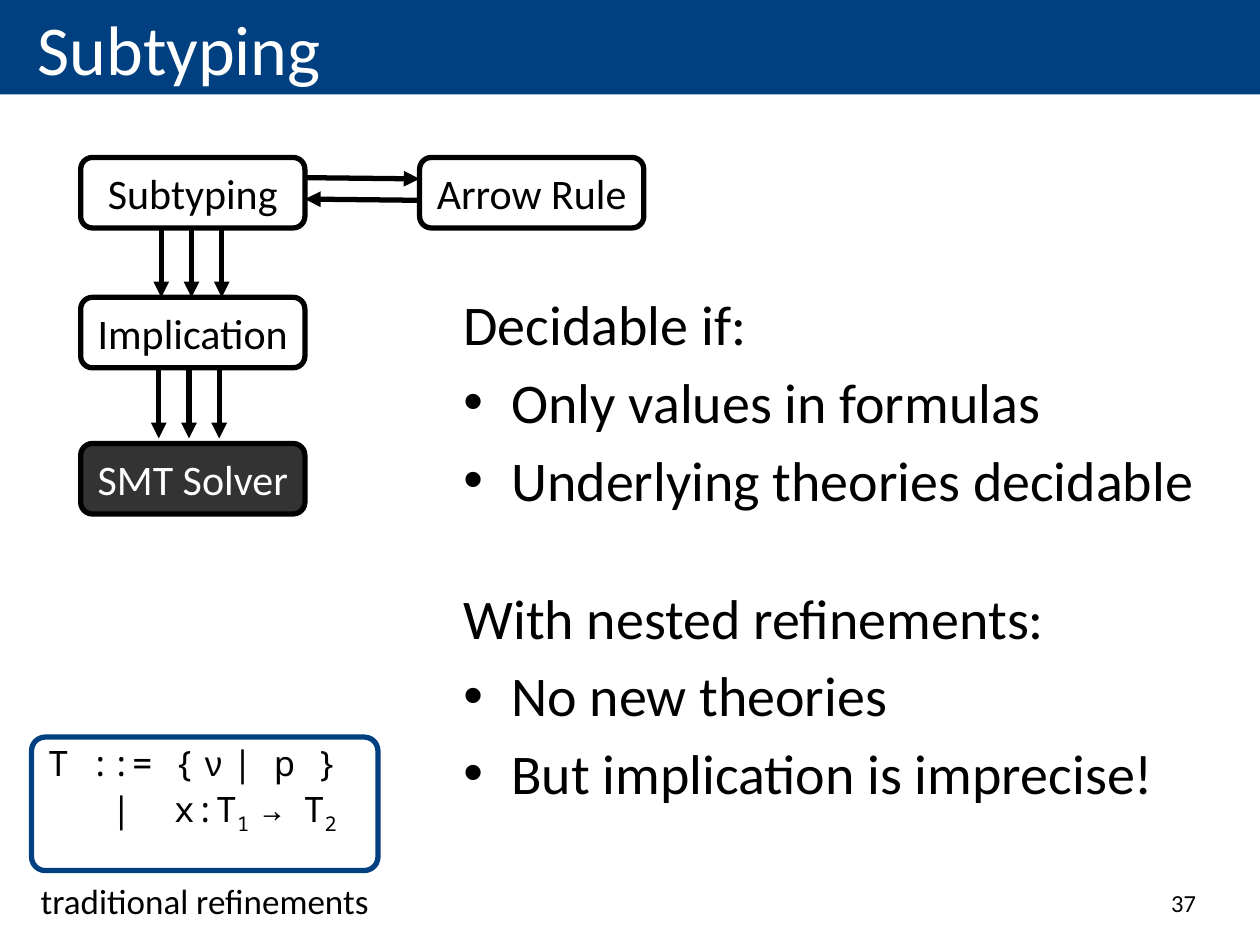
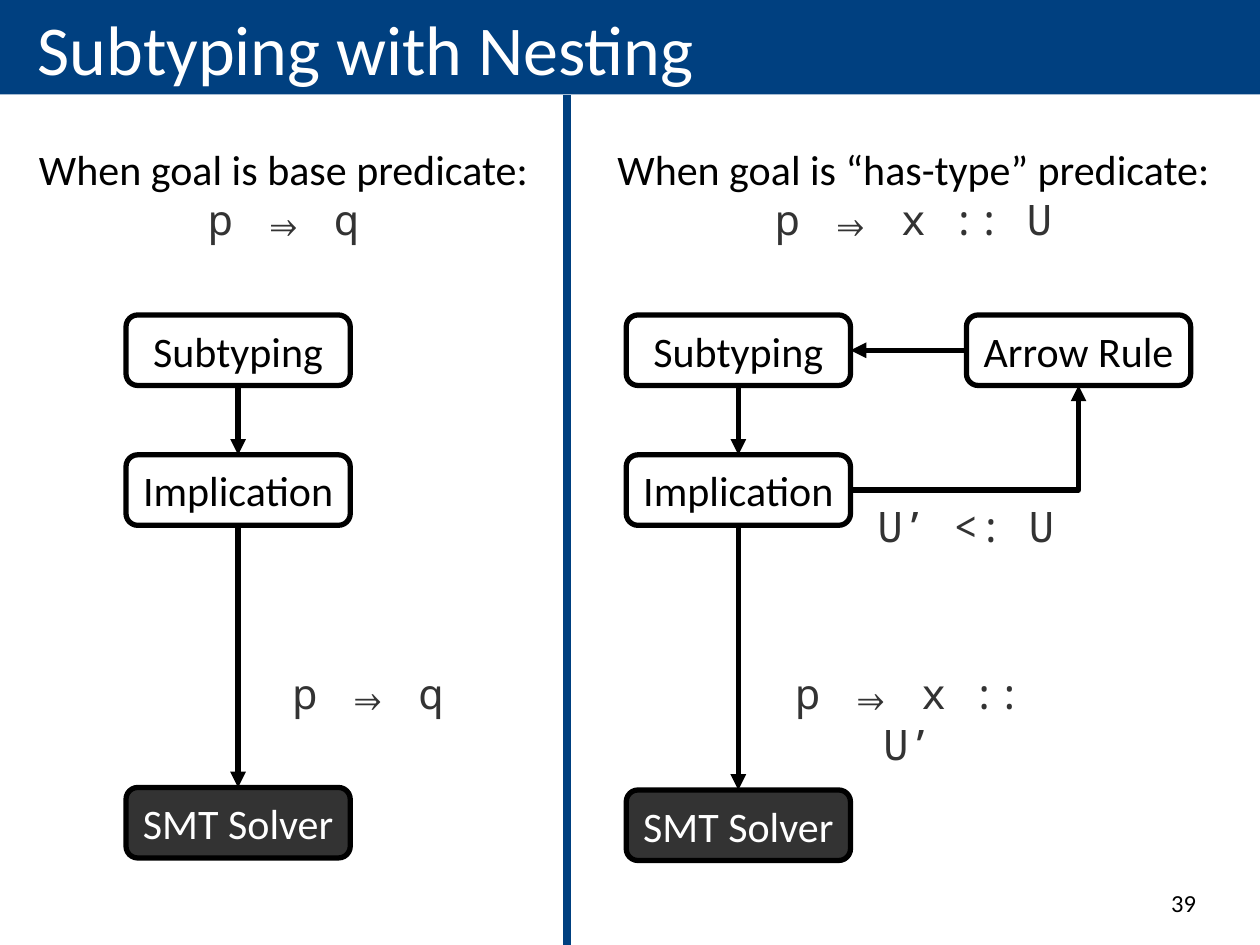
from lxml import etree
from pptx import Presentation
from pptx.dml.color import RGBColor
from pptx.enum import shapes, text
from pptx.oxml import ns
from pptx.util import Inches, Pt

NAVY, BLACK, DARK, WHITE = "004080", "000000", "333333", "FFFFFF"
SANS, MONO = "Calibri", "Noto Sans Mono"
BOX_W, BOX_H = 1.78, 0.56
CENTER, RIGHT = text.PP_ALIGN.CENTER, text.PP_ALIGN.RIGHT
TOP, MIDDLE, BOTTOM = (text.MSO_ANCHOR.TOP, text.MSO_ANCHOR.MIDDLE,
                       text.MSO_ANCHOR.BOTTOM)

SUBTYPING = {
    "title": "Subtyping",
    "number": "37",
    "boxes": [("Subtyping", 0.64, 1.25), ("Arrow Rule", 3.33, 1.25),
              ("Implication", 0.64, 2.36), ("SMT Solver", 0.64, 3.52)],
    "arrows": [((2.42, 1.41), (3.33, 1.42)), ((3.33, 1.59), (2.42, 1.58))],
    "triples": [(1.52, 1.81), (1.5, 2.93)],
    "lists": [
        (2.25, "Decidable if:",
         ["Only values in formulas", "Underlying theories decidable"]),
        (4.58, "With nested refinements:",
         ["No new theories", "But implication is imprecise!"]),
    ],
    "grammar": [
        [("T ::= {", MONO, 0), (" ν ", "Arial", 0), ("| p }", MONO, 0)],
        [("|\tx:T", MONO, 0), ("1 ", MONO, -25000), ("→ T", MONO, 0),
         ("2", MONO, -25000)],
    ],
    "caption": "traditional refinements",
}

NESTING = {
    "title": "Subtyping with Nesting",
    "number": "39",
    "columns": [(1, 6.25), (4.97, 6.27)],
    "goals": [
        (0, 4.5, "When goal is base predicate:", "p ⇒ q"),
        (4.5, 5.5, "When goal is “has-type” predicate:", "p ⇒ x :: U"),
    ],
    "arrow_rule": ("Arrow Rule", 7.67, 2.5),
    "labels": [("p ⇒ q", 1.92, 5.25, 2), ("p ⇒ x :: U’", 5.92, 5.25, 2.58),
               ("U’ <: U", 6.75, 3.92, 1.83)],
}


def color(value):
    return RGBColor.from_string(value)


def place(sp, left, top, width, height):
    sp.left, sp.top = Inches(left), Inches(top)
    sp.width, sp.height = Inches(width), Inches(height)


def add_run(p, words, size, fill=BLACK, font=SANS, baseline=0):
    r = p.add_run()
    r.text = words
    r.font.size, r.font.name = Pt(size), font
    r.font.color.rgb = color(fill)
    if baseline:
        r.font._element.set("baseline", str(baseline))


def indent(p, left, first, bullet=None):
    pPr = p._p.get_or_add_pPr()
    pPr.set("marL", str(Inches(left)))
    pPr.set("indent", str(Inches(first)))
    if bullet:
        etree.SubElement(pPr, ns.qn("a:buFont")).set("typeface", "Arial")
        etree.SubElement(pPr, ns.qn("a:buChar")).set("char", bullet)


def next_paragraph(tf, i):
    return tf.add_paragraph() if i else tf.paragraphs[0]


def add_text(slide, at, lines, size, align=CENTER, anchor=TOP):
    sp = slide.shapes.add_textbox(*map(Inches, at))
    tf = sp.text_frame
    tf.word_wrap, tf.vertical_anchor = True, anchor
    for i, (words, fill, font) in enumerate(lines):
        p = next_paragraph(tf, i)
        p.alignment = align
        add_run(p, words, size, fill, font)
    return tf


def add_rounded(slide, at, line, adjust, fill=None):
    sp = slide.shapes.add_shape(shapes.MSO_SHAPE.ROUNDED_RECTANGLE,
                                *map(Inches, at))
    sp.adjustments[0] = adjust
    sp.shadow.inherit = False
    if fill:
        sp.fill.solid()
        sp.fill.fore_color.rgb = color(fill)
    else:
        sp.fill.background()
    sp.line.color.rgb, sp.line.width = color(line), Pt(3)
    return sp.text_frame


def add_box(slide, label, left, top):
    solver = label == "SMT Solver"
    tf = add_rounded(slide, (left, top, BOX_W, BOX_H), BLACK, 0.167,
                     DARK if solver else None)
    tf.word_wrap, tf.vertical_anchor = False, MIDDLE
    p = tf.paragraphs[0]
    p.alignment = CENTER
    add_run(p, label, 24, WHITE if solver else BLACK)


def add_line(slide, start, end, fill=BLACK, width=3, arrow=True, bent=False):
    kind = shapes.MSO_CONNECTOR.ELBOW if bent else shapes.MSO_CONNECTOR.STRAIGHT
    sp = slide.shapes.add_connector(kind, *map(Inches, start + end))
    sp.line.color.rgb, sp.line.width = color(fill), Pt(width)
    spPr = sp._element.spPr
    if arrow:
        etree.SubElement(spPr.find(ns.qn("a:ln")),
                         ns.qn("a:tailEnd")).set("type", "triangle")
    if bent:
        spPr.find(ns.qn("a:prstGeom")).set("prst", "bentConnector2")
    etree.SubElement(spPr, ns.qn("a:effectLst"))


def add_slide(prs, content):
    slide = prs.slides.add_slide(prs.slide_layouts[5])
    sp = slide.shapes.title
    place(sp, 0, 0, 10, 0.75)
    sp.fill.solid()
    sp.fill.fore_color.rgb = color(NAVY)
    tf = sp.text_frame
    tf.auto_size = text.MSO_AUTO_SIZE.NONE
    tf.vertical_anchor, tf.margin_left = MIDDLE, Inches(0.3)
    p = tf.paragraphs[0]
    p.alignment = text.PP_ALIGN.LEFT
    add_run(p, content["title"], 40, WHITE)
    add_text(slide, (7.17, 6.83, 2.42, 0.5),
             [(content["number"], BLACK, SANS)], 14, RIGHT, BOTTOM)
    return slide


def add_list(slide, top, heading, items):
    lines = [(words, BLACK, SANS) for words in [heading] + items]
    tf = add_text(slide, (3.58, top, 6.42, 2.17), lines, 32,
                  text.PP_ALIGN.LEFT)
    for i, p in enumerate(tf.paragraphs):
        p.space_before = Pt(6)
        indent(p, 0.38, -0.38, "•" if i else None)


def add_grammar(slide, lines, caption):
    tf = add_rounded(slide, (0.25, 5.85, 2.75, 1.06), NAVY, 0.103)
    tf.word_wrap, tf.vertical_anchor = True, TOP
    tf.margin_top = 0
    for i, runs in enumerate(lines):
        p = next_paragraph(tf, i)
        p.alignment = text.PP_ALIGN.LEFT
        if i:
            p.space_before = Pt(2.5)
            indent(p, 1, -0.5)
        for words, font, baseline in runs:
            add_run(p, words, 20, BLACK, font, baseline)
    tf = add_text(slide, (0.25, 6.85, 2.75, 0.48), [(caption, BLACK, SANS)], 20)
    tf.margin_left = tf.margin_right = tf.margin_top = tf.margin_bottom = 0
    tf.paragraphs[0].line_spacing = 1.4


def build_subtyping(prs):
    c = SUBTYPING
    slide = add_slide(prs, c)
    add_grammar(slide, c["grammar"], c["caption"])
    for box in c["boxes"]:
        add_box(slide, *box)
    for start, end in c["arrows"]:
        add_line(slide, start, end)
    for center, top in c["triples"]:
        for step in (-1, 0, 1):
            x = center + step * 0.24
            add_line(slide, (x, top), (x, top + 0.55))
    for block in c["lists"]:
        add_list(slide, *block)


def build_nesting(prs):
    c = NESTING
    slide = add_slide(prs, c)
    for left, solver_top in c["columns"]:
        tops = [2.5, 3.61, solver_top]
        for label, top in zip(["Subtyping", "Implication", "SMT Solver"], tops):
            add_box(slide, label, left, top)
        x = left + BOX_W / 2
        for upper, lower in zip(tops, tops[1:]):
            add_line(slide, (x, upper + BOX_H), (x, lower))
    add_box(slide, *c["arrow_rule"])
    add_line(slide, (7.67, 2.78), (6.75, 2.78))
    add_line(slide, (6.75, 3.89), (8.56, 3.06), bent=True)
    add_line(slide, (4.5, 7.5), (4.5, 0.75), NAVY, 5, arrow=False)
    for left, width, heading, formula in c["goals"]:
        add_text(slide, (left, 1.09, width, 0.91),
                 [(heading, BLACK, SANS), (formula, DARK, MONO)], 24)
    for formula, left, top, width in c["labels"]:
        add_text(slide, (left, top, width, 0.5), [(formula, DARK, MONO)], 24)


def main():
    prs = Presentation()
    prs.slide_width, prs.slide_height = Inches(10), Inches(7.5)
    build_subtyping(prs)
    build_nesting(prs)
    prs.save("out.pptx")


if __name__ == "__main__":
    main()
